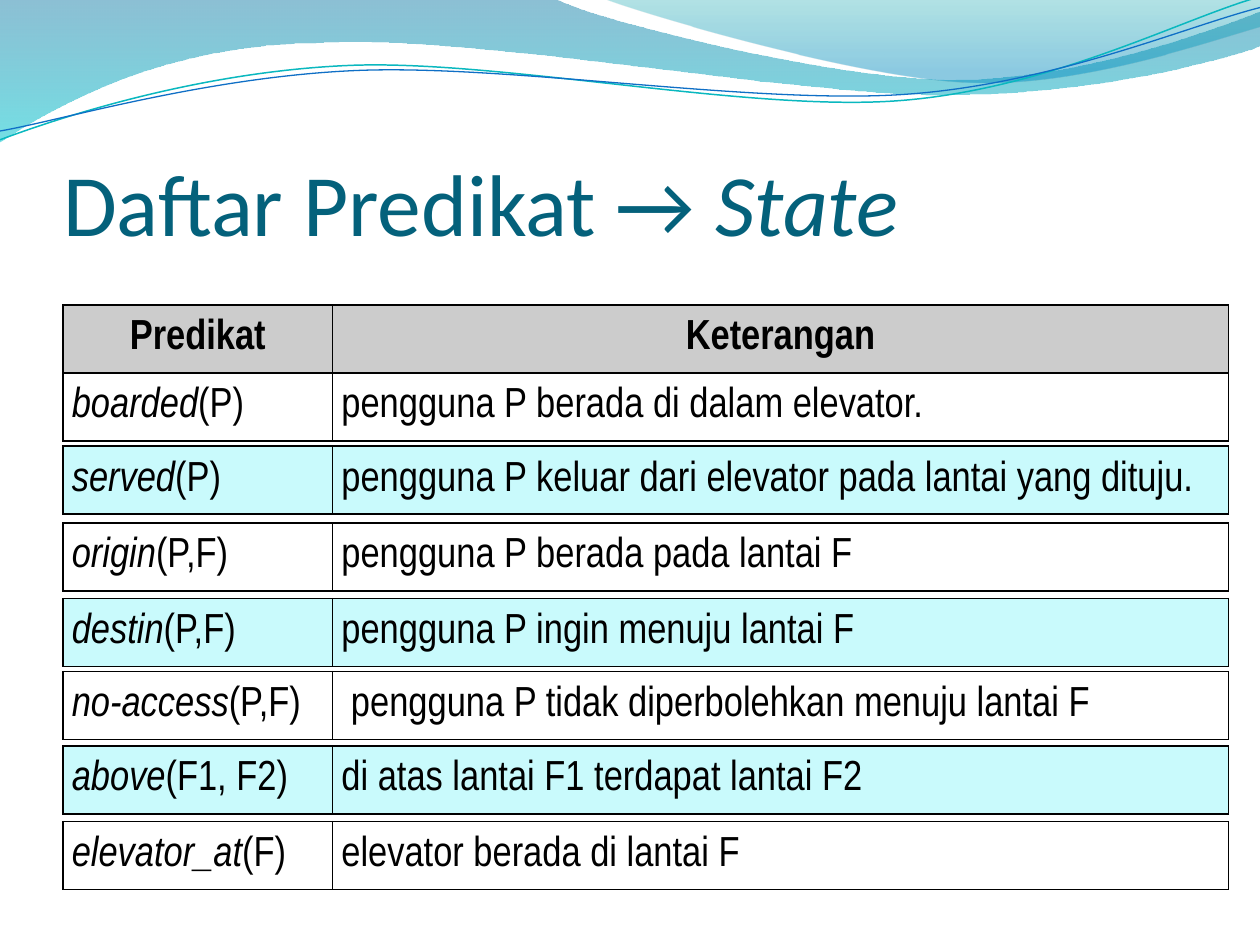
from lxml import etree
from pptx import Presentation
from pptx.dml.color import RGBColor
from pptx.enum.text import MSO_ANCHOR, PP_ALIGN
from pptx.oxml.ns import qn
from pptx.util import Inches, Pt

MIDDLE, BOTTOM = MSO_ANCHOR.MIDDLE, MSO_ANCHOR.BOTTOM
LEFT, CENTER, JUSTIFY = PP_ALIGN.LEFT, PP_ALIGN.CENTER, PP_ALIGN.JUSTIFY

BLACK = RGBColor(0x00, 0x00, 0x00)
TITLE_BLUE = RGBColor(0x04, 0x61, 0x7B)
HEADER_GRAY = RGBColor(0xCC, 0xCC, 0xCC)
ROW_CYAN = RGBColor(0xC9, 0xFA, 0xFC)
DEEP_BLUE = RGBColor(0x00, 0x74, 0xA1)
AQUA = RGBColor(0x00, 0xC6, 0xCF)
TEAL = RGBColor(0x00, 0xA1, 0xA9)
SKY = RGBColor(0x00, 0x8B, 0xBF)
LINE_TEAL = RGBColor(0x0A, 0xB8, 0xBF)
LINE_BLUE = RGBColor(0x0F, 0x6F, 0xC6)

TABLE_LEFT = 0.5
COLUMN_WIDTHS = (2.14, 7.11)
ROW_HEIGHT = 0.54

HEADER = ("Predikat", "Keterangan")
PREDICATES = [
    (2.42, "boarded", "(P)", "pengguna P berada di dalam elevator."),
    (3.54, "served", "(P)", "pengguna P keluar dari elevator pada lantai yang dituju."),
    (4.15, "origin", "(P,F)", "pengguna P berada pada lantai F"),
    (4.75, "destin", "(P,F)", "pengguna P ingin menuju lantai F"),
    (5.33, "no-access", "(P,F)", " pengguna P tidak diperbolehkan menuju lantai F"),
    (5.92, "above", "(F1, F2)", "di atas lantai F1 terdapat lantai F2"),
    (6.52, "elevator_at", "(F)", "elevator berada di lantai F"),
]

BANDS = [
    ((0, -0.01),
     [(4.4, -0.01), (4.76, 0.17, 6.64, 0.63, 7.58, 0.63),
      (8.53, 0.63, 9.58, 0.26, 10, 0.09), (10.01, 0.36),
      (9.83, 0.44, 8.7, 0.76, 7.46, 0.75), (6.22, 0.75, 3.82, 0.28, 2.57, 0.34),
      (1.29, 0.35, 0.46, 0.83, -0.01, 1.13), (0, -0.01)],
     [(0, DEEP_BLUE, 45), (1, AQUA, 55)]),
    ((4.79, -0.01),
     [(5.09, 0.11, 6.82, 0.62, 7.69, 0.65), (8.56, 0.69, 9.61, 0.32, 10, 0.21),
      (10, 0), (4.79, -0.01)],
     [(0, TEAL, 30), (0.8, SKY, 45)]),
]
WAVES = [
    ((0, 1.11),
     [(0.48, 0.93, 1.58, 0.57, 2.77, 0.52), (3.95, 0.47, 5.93, 0.89, 7.13, 0.8),
      (8.33, 0.71, 9.38, 0.15, 9.98, -0.02)], LINE_TEAL, 0.85),
    ((0, 1.04),
     [(0.47, 0.96, 1.64, 0.61, 2.83, 0.56), (4.03, 0.51, 5.97, 0.83, 7.17, 0.75),
      (8.36, 0.67, 9.41, 0.21, 10, 0.06)], LINE_BLUE, 0.75),
]


def bend_segments(outline, segments):
    """Turn each run of three lines that stands for a curve into a cubic curve."""
    lines = iter(list(outline._element.spPr.iter(qn("a:lnTo"))))
    for segment in segments:
        first = next(lines)
        if len(segment) == 6:
            first.tag = qn("a:cubicBezTo")
            for line in (next(lines), next(lines)):
                first.append(line[0])
                line.getparent().remove(line)


def add_outline(slide, start, segments, close):
    """Draw a freeform from segments of one end point or two controls and an end."""
    vertices = [(Inches(x), Inches(y)) for segment in segments
                for x, y in zip(segment[::2], segment[1::2])]
    builder = slide.shapes.build_freeform(Inches(start[0]), Inches(start[1]), scale=1.0)
    builder.add_line_segments(vertices, close=close)
    outline = builder.convert_to_shape()
    outline.shadow.inherit = False
    bend_segments(outline, segments)
    return outline


def add_band(slide, start, segments, stops):
    """Add a translucent band with a vertical gradient."""
    band = add_outline(slide, start, segments, True)
    band.line.fill.background()
    band.fill.gradient()
    band.fill.gradient_angle = 270
    for stop, (position, color, _) in zip(band.fill.gradient_stops, stops):
        stop.position = position
        stop.color.rgb = color
    for color_xml, (_, _, opacity) in zip(band._element.spPr.iter(qn("a:srgbClr")), stops):
        etree.SubElement(color_xml, qn("a:alpha"), val=str(opacity * 1000))


def add_wave(slide, start, segments, color, width):
    """Add an open wavy line."""
    wave = add_outline(slide, start, segments, False)
    wave.fill.background()
    wave.line.color.rgb = color
    wave.line.width = Pt(width)


def add_title(slide):
    """Place and format the title."""
    title = slide.shapes.title
    title.left, title.top, title.width, title.height = map(Inches, (0.5, 0.77, 9.08, 1.25))
    frame = title.text_frame
    frame.margin_left = frame.margin_right = frame.margin_bottom = 0
    frame.margin_top = Inches(0.05)
    frame.vertical_anchor = BOTTOM
    paragraph = frame.paragraphs[0]
    paragraph.alignment = LEFT
    paragraph.font.size = Pt(50)
    paragraph.font.name = "Calibri"
    paragraph.font.color.rgb = TITLE_BLUE
    paragraph.add_run().text = "Daftar Predikat → "
    state = paragraph.add_run()
    state.text = "State"
    state.font.italic = True


def add_borders(cell):
    """Give a cell thin black borders."""
    properties = cell._tc.get_or_add_tcPr()
    for index, side in enumerate(("a:lnL", "a:lnR", "a:lnT", "a:lnB")):
        border = etree.Element(qn(side), w=str(Pt(1)))
        fill = etree.SubElement(border, qn("a:solidFill"))
        etree.SubElement(fill, qn("a:srgbClr"), val=str(BLACK))
        properties.insert(index, border)


def fill_cell(cell, text, color, alignment, italic_part="", bold=False):
    """Write and format a cell, with an optional italic beginning."""
    cell.margin_left = cell.margin_right = Inches(0.07)
    cell.margin_top = cell.margin_bottom = 0
    cell.vertical_anchor = MIDDLE
    if color is None:
        cell.fill.background()
    else:
        cell.fill.solid()
        cell.fill.fore_color.rgb = color
    add_borders(cell)
    paragraph = cell.text_frame.paragraphs[0]
    paragraph.alignment = alignment
    paragraph.font.size = Pt(24)
    paragraph.font.name = "Arial Narrow"
    paragraph.font.bold = bold
    paragraph.font.color.rgb = BLACK
    if italic_part:
        name = paragraph.add_run()
        name.text = italic_part
        name.font.italic = True
    paragraph.add_run().text = text


def add_predicate_table(slide, top, name, arguments, meaning, color, header=()):
    """Add a table for one predicate, under a header row if given."""
    row_count = 2 if header else 1
    table = slide.shapes.add_table(
        row_count, 2, Inches(TABLE_LEFT), Inches(top),
        Inches(sum(COLUMN_WIDTHS)), Inches(ROW_HEIGHT * row_count)).table
    table.first_row = table.horz_banding = False
    for column, width in zip(table.columns, COLUMN_WIDTHS):
        column.width = Inches(width)
    for index, label in enumerate(header):
        fill_cell(table.cell(0, index), label, HEADER_GRAY, CENTER, bold=True)
    fill_cell(table.cell(row_count - 1, 0), arguments, color, JUSTIFY, name)
    fill_cell(table.cell(row_count - 1, 1), meaning, color, JUSTIFY)


def main():
    """Build the slide and save it."""
    presentation = Presentation()
    presentation.slide_width, presentation.slide_height = Inches(10), Inches(7.5)
    slide = presentation.slides.add_slide(presentation.slide_layouts[5])
    for band in BANDS:
        add_band(slide, *band)
    for wave in WAVES:
        add_wave(slide, *wave)
    add_title(slide)
    for index, predicate in enumerate(PREDICATES):
        color = ROW_CYAN if index % 2 else None
        add_predicate_table(slide, *predicate, color, HEADER if index == 0 else ())
    presentation.save("out.pptx")


if __name__ == "__main__":
    main()
